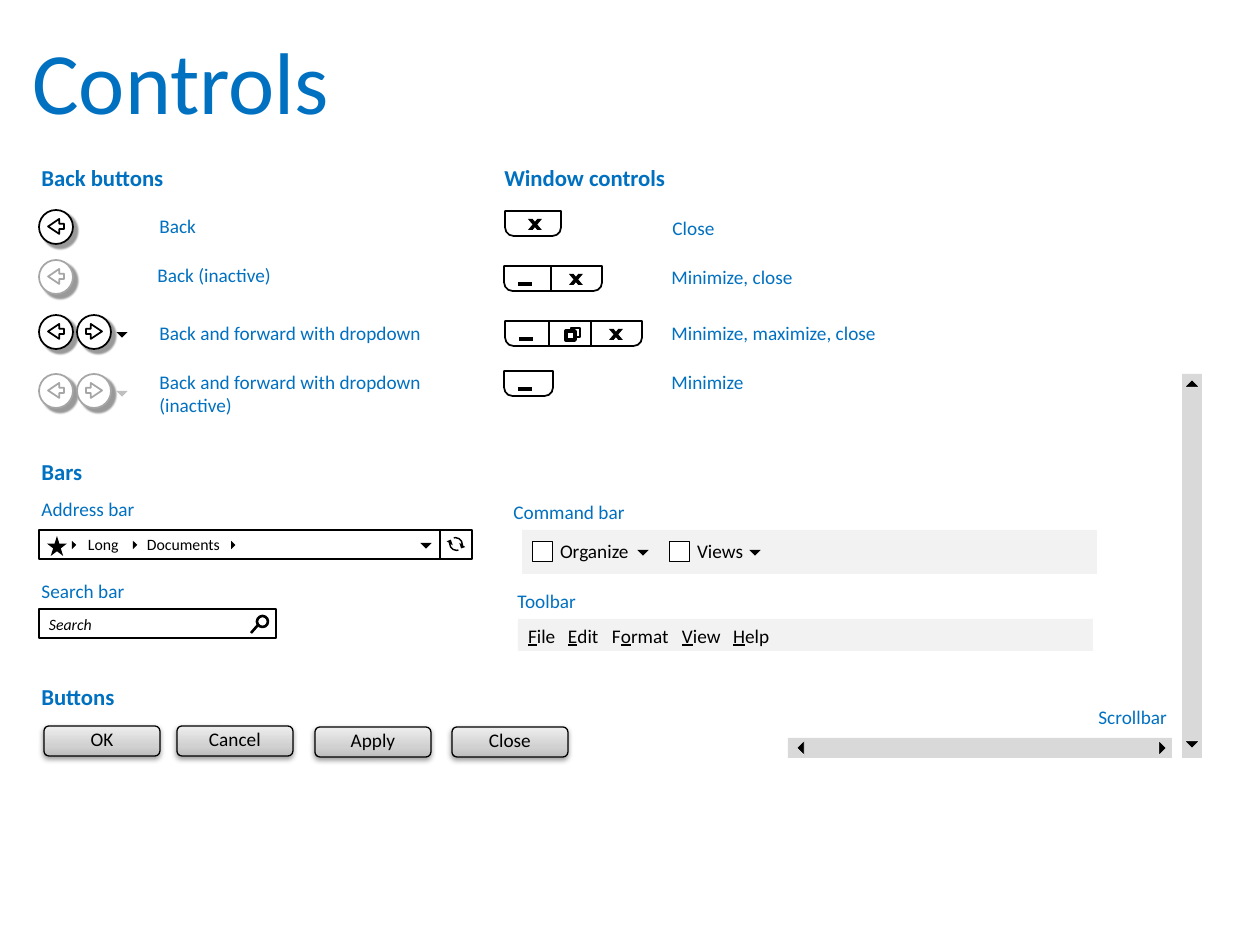
import pptx
import pptx.dml.color
import pptx.enum.shapes
import pptx.enum.text
import pptx.oxml
import pptx.oxml.ns
import pptx.util

RGB = pptx.dml.color.RGBColor
BLUE = RGB(0x00, 0x70, 0xC0)
BLACK = RGB(0x00, 0x00, 0x00)
WHITE = RGB(0xFF, 0xFF, 0xFF)
GREY = RGB(0xA6, 0xA6, 0xA6)
SILVER = RGB(0xBF, 0xBF, 0xBF)
TRACK = RGB(0xD9, 0xD9, 0xD9)
PALE = RGB(0xF2, 0xF2, 0xF2)
STOPS = ((0, "BDBDBD"), (35, "D1D1D1"), (100, "EEEEEE"))

KIND = pptx.enum.shapes.MSO_SHAPE
FIT = pptx.enum.text.MSO_AUTO_SIZE
MID = pptx.enum.text.MSO_ANCHOR.MIDDLE
MAIN = pptx.oxml.ns.nsdecls("a")
SCALE = 914400 / 126
TURN = {"down": 315, "left": 45, "up": 135, "right": 225}


def px(*nums):
    return [round(n * SCALE) for n in nums]


def pad(frame, left, top, right, low):
    sides = {"margin_left": left, "margin_top": top,
             "margin_right": right, "margin_bottom": low}
    for name, size in sides.items():
        setattr(frame, name, px(size)[0])


def style(run, size, color=BLACK, **extra):
    look = {"name": "Calibri", "size": pptx.util.Pt(size), **extra}
    for name, value in look.items():
        setattr(run.font, name, value)
    run.font.color.rgb = color


def shape(to, kind, box, fill=None, line=None, width=1, adj=(), turn=0):
    item = to.add_shape(kind, *px(*box))
    item.shadow.inherit = False
    item.rotation = turn
    for i, value in enumerate(adj):
        item.adjustments[i] = value
    if fill is not None:
        item.fill.solid()
        item.fill.fore_color.rgb = fill
    if line is None:
        item.line.fill.background()
    else:
        item.line.color.rgb = line
        item.line.width = pptx.util.Pt(width)
    return item


def shade(item, alpha, blur, dist, angle):
    list_ = item.element.spPr.find(pptx.oxml.ns.qn("a:effectLst"))
    list_.append(pptx.oxml.parse_xml(
        f'<a:outerShdw {MAIN} blurRad="{int(blur * 12700)}" '
        f'dist="{int(dist * 12700)}" dir="{angle * 60000}" algn="t" rotWithShape="0">'
        f'<a:srgbClr val="000000"><a:alpha val="{alpha * 1000}"/></a:srgbClr>'
        '</a:outerShdw>'))


def rule(to, x1, y1, x2, y2, width=0.75):
    link = to.add_connector(pptx.enum.shapes.MSO_CONNECTOR.STRAIGHT, *px(x1, y1, x2, y2))
    link.line.color.rgb = BLACK
    link.line.width = pptx.util.Pt(width)
    link.element.spPr.append(pptx.oxml.parse_xml(f"<a:effectLst {MAIN}/>"))


def label(to, text, x, y, w, h=37, size=11, wrap=False, **extra):
    frame = to.add_textbox(*px(x, y, w, h)).text_frame
    frame.word_wrap = wrap
    frame.auto_size = FIT.SHAPE_TO_FIT_TEXT
    frame.text = text
    for para in frame.paragraphs:
        style(para.runs[0], size, BLUE, **extra)


def inner(to, box, parts, size=9, **extra):
    """Black text in a bar; parts are (text, underlined) pairs."""
    frame = to.add_textbox(*px(*box)).text_frame
    frame.word_wrap = True
    frame.auto_size = FIT.SHAPE_TO_FIT_TEXT
    pad(frame, 0, 5, 0, 5)
    para = frame.paragraphs[0]
    for text, under in parts:
        run = para.add_run()
        run.text = text
        style(run, size, underline=under, **extra)
    return para


def tip(to, way, x, y, size=8, fill=BLACK, line=None):
    shape(to, KIND.RIGHT_TRIANGLE, (x, y, size, size), fill, line, 0.25, turn=TURN[way])


def disc(to, kind, x, y, color):
    ring = shape(to, KIND.OVAL, (x, y, 34, 34), WHITE, color)
    shade(ring, 40, 1, 3, 45)
    shape(to, kind, (x + 9, y + 9, 16, 15), WHITE, color, adj=(0.354, 0.749))


def back(to, y, color=BLACK, drop=None):
    group = to.add_group_shape().shapes
    disc(group, KIND.LEFT_ARROW, 39, y, color)
    if drop is not None:
        disc(group, KIND.RIGHT_ARROW, 77, y, color)
        tip(group, "down", 118, y + 13, fill=drop)


def window(to, x, y, w, cuts=(), dash=True, cross=True, both=False):
    group = to.add_group_shape().shapes
    shape(group, KIND.ROUND_2_SAME_RECTANGLE, (x, y, w, 25), WHITE, BLACK,
          adj=(0.344, 0), turn=180)
    for cut in cuts:
        rule(group, cut, y, cut, y + 25)
    if both:
        shape(group, KIND.RECTANGLE, (571, y + 7, 9, 9), WHITE, BLACK, 1.5)
        shape(group, KIND.RECTANGLE, (566, y + 10, 9, 9), WHITE, BLACK, 2.25)
    if cross:
        for flip in "01":
            bar = shape(group, KIND.PARALLELOGRAM, (x + w - 33, y + 8, 14, 11),
                        BLACK, adj=(0.851,))
            bar.element.spPr.xfrm.set("flipH", flip)
    if dash:
        rule(group, x + 14, y + 18, x + 28, y + 18, 2.25)


def button(to, text, x, y):
    item = shape(to, KIND.ROUNDED_RECTANGLE, (x, y, 116, 30), None, BLACK, 0.75)
    item.fill.gradient()
    item.fill.gradient_angle = 90
    stops = item.element.spPr.find(".//" + pptx.oxml.ns.qn("a:gsLst"))
    for old in list(stops):
        stops.remove(old)
    for pos, color in STOPS:
        stops.append(pptx.oxml.parse_xml(
            f'<a:gs {MAIN} pos="{pos * 1000}"><a:srgbClr val="{color}"/></a:gs>'))
    shade(item, 38, 3.1, 1.6, 90)
    frame = item.text_frame
    frame.vertical_anchor = MID
    pad(frame, 13, 0, 13, 5)
    frame.text = text
    frame.paragraphs[0].alignment = pptx.enum.text.PP_ALIGN.CENTER
    style(frame.paragraphs[0].runs[0], 11)


def address(to):
    group = to.add_group_shape().shapes
    shape(group, KIND.RECTANGLE, (39, 530, 433, 29), WHITE, BLACK)
    shape(group, KIND.STAR_5_POINT, (47, 536, 20, 20), BLACK)
    for x in (69, 130, 228):
        tip(group, "right", x, 542, 6)
    inner(group, (88, 530, 49, 29), [("Long", False)])
    inner(group, (147, 530, 129, 29), [("Documents", False)])
    tip(group, "down", 422, 539)
    rule(group, 440, 530, 440, 559)
    for x, y, turn in ((446, 533, 210), (445, 534, 31.3)):
        shape(group, KIND.CIRCULAR_ARROW, (x, y, 21, 21), BLACK,
              adj=(0.073, 19.32, 199.281, 134.68, 0.174), turn=turn)


def search(to):
    group = to.add_group_shape().shapes
    shape(group, KIND.RECTANGLE, (39, 609, 237, 29), WHITE, BLACK)
    inner(group, (49, 610, 129, 29), [("Search", False)], italic=True)
    shape(group, KIND.OVAL, (257, 616, 11, 11), WHITE, BLACK, 1.5)
    rule(group, 258, 625, 251, 633, 1.5)


def command(to):
    group = to.add_group_shape().shapes
    shape(group, KIND.RECTANGLE, (522, 530, 575, 44), PALE)
    for text, x, end in (("Organize", 532, 639), ("Views", 669, 751)):
        shape(group, KIND.RECTANGLE, (x, 541, 20, 20), WHITE, BLACK, 0.25)
        inner(group, (x + 28, 534, 79, 33), [(text, False)], 11)
        tip(group, "down", end, 546)


def menu(to):
    group = to.add_group_shape().shapes
    shape(group, KIND.RECTANGLE, (518, 619, 575, 32), PALE)
    parts = [("F", True), ("ile\t", False), ("E", True), ("dit\tF", False), ("o", True),
             ("rmat\t", False), ("V", True), ("iew\t", False), ("H", True), ("elp", False)]
    para = inner(group, (528, 619, 561, 33), parts, 11)
    tabs = "".join(f'<a:tab pos="{pos}" algn="l"/>' for pos in px(40, 84, 154, 205))
    props = para._p.get_or_add_pPr()
    props.append(pptx.oxml.parse_xml(f"<a:tabLst {MAIN}>{tabs}</a:tabLst>"))


def scroll(to, box, *tips):
    group = to.add_group_shape().shapes
    shape(group, KIND.RECTANGLE, box, TRACK)
    for way, x, y in tips:
        tip(group, way, x, y, 10, line=WHITE)


def main():
    deck = pptx.Presentation()
    deck.slide_width, deck.slide_height = px(1260, 945)
    to = deck.slides.add_slide(deck.slide_layouts[6]).shapes

    # Title and section heads
    label(to, "Controls", 20, 21, 1221, 161, 50, True)
    for text, x, y, w in (("Back buttons", 29, 158, 150), ("Window controls", 492, 158, 189),
                          ("Bars", 29, 452, 67), ("Buttons", 29, 677, 100)):
        label(to, text, x, y, w, 40, 13, bold=True)

    # Blue captions
    for text, x, y, w in (
            ("Back", 147, 208, 62), ("Back (inactive)", 145, 257, 140),
            ("Back and forward with dropdown", 147, 315, 290),
            ("Back and forward with dropdown\n(inactive)", 147, 364, 290),
            ("Close", 660, 210, 68), ("Minimize, close", 659, 259, 147),
            ("Minimize, maximize, close", 659, 315, 232), ("Minimize", 659, 364, 98),
            ("Address bar", 29, 491, 120), ("Search bar", 29, 573, 110),
            ("Command bar", 501, 494, 137), ("Toolbar", 505, 583, 86),
            ("Scrollbar", 1086, 699, 94)):
        label(to, text, x, y, w)

    # Back buttons
    back(to, 210)
    back(to, 260, GREY)
    back(to, 315, drop=BLACK)
    back(to, 374, GREY, SILVER)

    # Window controls
    window(to, 505, 211, 56, dash=False)
    window(to, 504, 266, 98, (551,))
    window(to, 505, 321, 137, (549, 591), both=True)
    window(to, 504, 371, 49, cross=False)

    # Bars
    address(to)
    search(to)
    command(to)
    menu(to)

    # Push buttons
    for text, x, y in (("OK", 44, 726), ("Cancel", 177, 726),
                       ("Apply", 315, 727), ("Close", 452, 727)):
        button(to, text, x, y)

    # Scrollbars
    scroll(to, (1182, 374, 20, 384), ("up", 1187, 382), ("down", 1187, 736))
    scroll(to, (788, 738, 384, 20), ("right", 1154, 743), ("left", 799, 743))

    deck.save("out.pptx")


if __name__ == "__main__":
    main()
